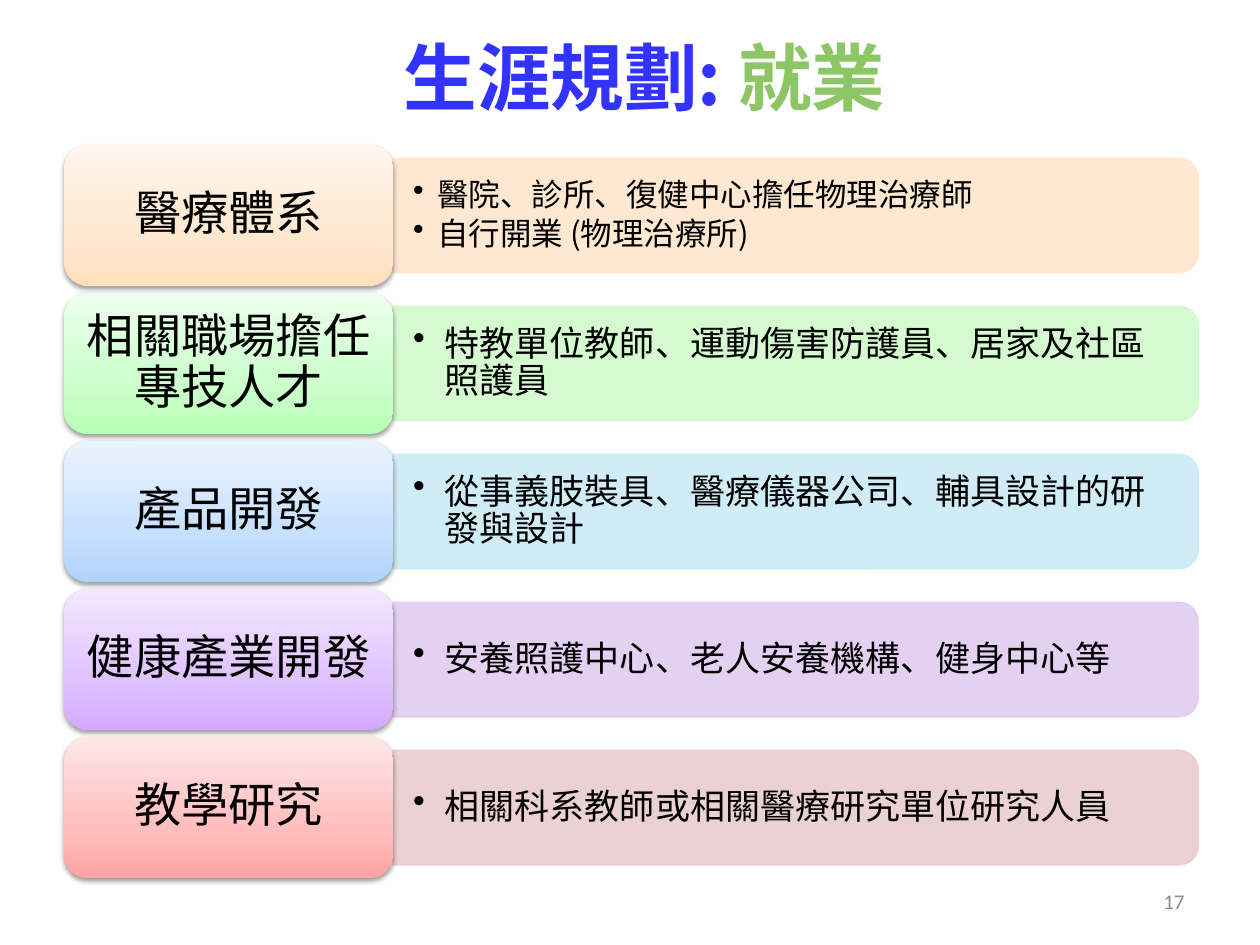
import pptx
import pptx.dml.color
import pptx.enum.shapes
import pptx.enum.text
import pptx.oxml
import pptx.oxml.ns
import pptx.util
from lxml import etree

Inches, Pt = pptx.util.Inches, pptx.util.Pt
SHAPE = pptx.enum.shapes.MSO_SHAPE
ALIGN = pptx.enum.text.PP_ALIGN
MIDDLE = pptx.enum.text.MSO_ANCHOR.MIDDLE
qn = pptx.oxml.ns.qn

CJK = "Noto Sans CJK SC"
LEFT, TOP, PITCH = 0.51, 1.15, 1.175
CARD_W, CARD_H = 2.61, 1.12
BAR_X, BAR_W, BAR_H = LEFT + CARD_W, 6.39, 0.91
TEXT_W, TEXT_H = 6.34, 0.82

# label, bullets, bullet size, hanging indent, bar colour, gradient from bottom to top
ROWS = [
    ("醫療體系", ["醫院、診所、復健中心擔任物理治療師", "自行開業 (物理治療所)"],
     18, 0.19, "FFE6CC", ("FFDFBC", "FFE8D0", "FFF6ED")),
    ("相關職場擔任 專技人才", ["特教單位教師、運動傷害防護員、居家及社區照護員"],
     20, 0.25, "D1FACB", ("B7FFB7", "CCFFCC", "ECFFEC")),
    ("產品開發", ["從事義肢裝具、醫療儀器公司、輔具設計的研發與設計"],
     20, 0.25, "CBEBF6", ("B0D4FF", "C7E0FF", "EAF3FF")),
    ("健康產業開發", ["安養照護中心、老人安養機構、健身中心等"],
     20, 0.25, "E2CCF0", ("D5A9FF", "E0C2FF", "F3E8FF")),
    ("教學研究", ["相關科系教師或相關醫療研究單位研究人員"],
     20, 0.25, "EACDCE", ("FFA3A3", "FFBEBE", "FFE6E6")),
]


def rgb(value):
    return pptx.dml.color.RGBColor.from_string(value)


def sub(parent, tag, **attrs):
    return etree.SubElement(parent, qn(tag), {k: str(v) for k, v in attrs.items()})


def format_run(r, size, color, font=CJK, bold=False):
    r.font.size, r.font.bold, r.font.name = Pt(size), bold, font
    r.font.color.rgb = rgb(color)
    sub(r._r.get_or_add_rPr(), "a:ea", typeface=CJK)


def setup_frame(tf, inset_x, inset_y):
    tf.word_wrap, tf.vertical_anchor = True, MIDDLE
    tf.margin_left = tf.margin_right = Inches(inset_x)
    tf.margin_top = tf.margin_bottom = Inches(inset_y)


def add_bar(slide, middle, color):
    """Bar with rounded right end: a shape with a rounded top, turned by 90 degrees."""
    sp = slide.shapes.add_shape(
        SHAPE.ROUND_2_SAME_RECTANGLE,
        Inches(BAR_X + (BAR_W - BAR_H) / 2), Inches(middle - BAR_W / 2),
        Inches(BAR_H), Inches(BAR_W))
    sp.rotation = 90
    sp.shadow.inherit = False
    sp.fill.solid()
    sp.fill.fore_color.rgb = rgb(color)
    sp.line.color.rgb = rgb(color)
    sp.line.width = Pt(0.75)
    for clr in sp._element.spPr.iter(qn("a:srgbClr")):
        sub(clr, "a:alpha", val=90000)


def add_bullets(slide, middle, lines, size, indent):
    box = slide.shapes.add_textbox(Inches(BAR_X), Inches(middle - TEXT_H / 2),
                                   Inches(TEXT_W), Inches(TEXT_H))
    tf = box.text_frame
    setup_frame(tf, 0.16, 0.12)
    tf.text = "\n".join(lines)
    for p in tf.paragraphs:
        pPr = p._p.get_or_add_pPr()
        pPr.set("marL", str(Inches(indent)))
        pPr.set("indent", str(-Inches(indent)))
        sub(pPr, "a:buChar", char="•")
        p.line_spacing = 0.9
        p.space_after = Pt(size * 0.15)
        format_run(p.runs[0], size, "000000")


def add_card(slide, top, label, colors):
    """Label card with a three-stop gradient and a soft shadow."""
    sp = slide.shapes.add_shape(SHAPE.ROUNDED_RECTANGLE, Inches(LEFT), Inches(top),
                                Inches(CARD_W), Inches(CARD_H))
    sp.fill.gradient()
    sp.fill.gradient_angle = 90
    stops = sp._element.spPr.find(".//" + qn("a:gsLst"))
    for old in list(stops):
        stops.remove(old)
    for share, color in zip((0, 35, 100), colors):
        sub(sub(stops, "a:gs", pos=share * 1000), "a:srgbClr", val=color)
    sp.line.fill.background()

    sp.shadow.inherit = False
    effects = sp._element.spPr.find(qn("a:effectLst"))
    shadow = sub(effects, "a:outerShdw", blurRad=Pt(3.1), dist=Pt(1.6),
                 dir=5400000, rotWithShape=0)
    sub(sub(shadow, "a:srgbClr", val="000000"), "a:alpha", val=38000)

    tf = sp.text_frame
    setup_frame(tf, 0.11, 0.06)
    tf.text = label
    p = tf.paragraphs[0]
    p.alignment, p.line_spacing = ALIGN.CENTER, 0.9
    format_run(p.runs[0], 27, "000000")


def set_title(slide):
    title = slide.shapes.title
    title.left, title.top = Inches(1.46), Inches(0.13)
    title.width, title.height = Inches(7.31), Inches(0.94)
    title.text_frame.vertical_anchor = MIDDLE
    p = title.text_frame.paragraphs[0]
    p.alignment = ALIGN.CENTER
    for text, color, font in (("生涯規劃: ", "3333FF", CJK),
                              ("就業", "8DC765", "Times New Roman")):
        r = p.add_run()
        r.text = text
        format_run(r, 42, color, font, bold=True)


def add_page_number(slide, number):
    box = slide.shapes.add_textbox(Inches(7.17), Inches(6.95), Inches(2.33), Inches(0.4))
    setup_frame(box.text_frame, 0.1, 0.05)
    box.text_frame.text = number
    p = box.text_frame.paragraphs[0]
    p.alignment = ALIGN.RIGHT
    format_run(p.runs[0], 12, "8C8C8C", "Calibri")


def main():
    prs = pptx.Presentation()
    prs.slide_width, prs.slide_height = Inches(10), Inches(7.5)
    slide = prs.slides.add_slide(prs.slide_layouts[5])
    set_title(slide)
    for i, (label, lines, size, indent, bar_color, card_colors) in enumerate(ROWS):
        top = TOP + i * PITCH
        middle = top + CARD_H / 2
        add_bar(slide, middle, bar_color)
        add_bullets(slide, middle, lines, size, indent)
        add_card(slide, top, label, card_colors)
    add_page_number(slide, "17")
    prs.save("out.pptx")


if __name__ == "__main__":
    main()
